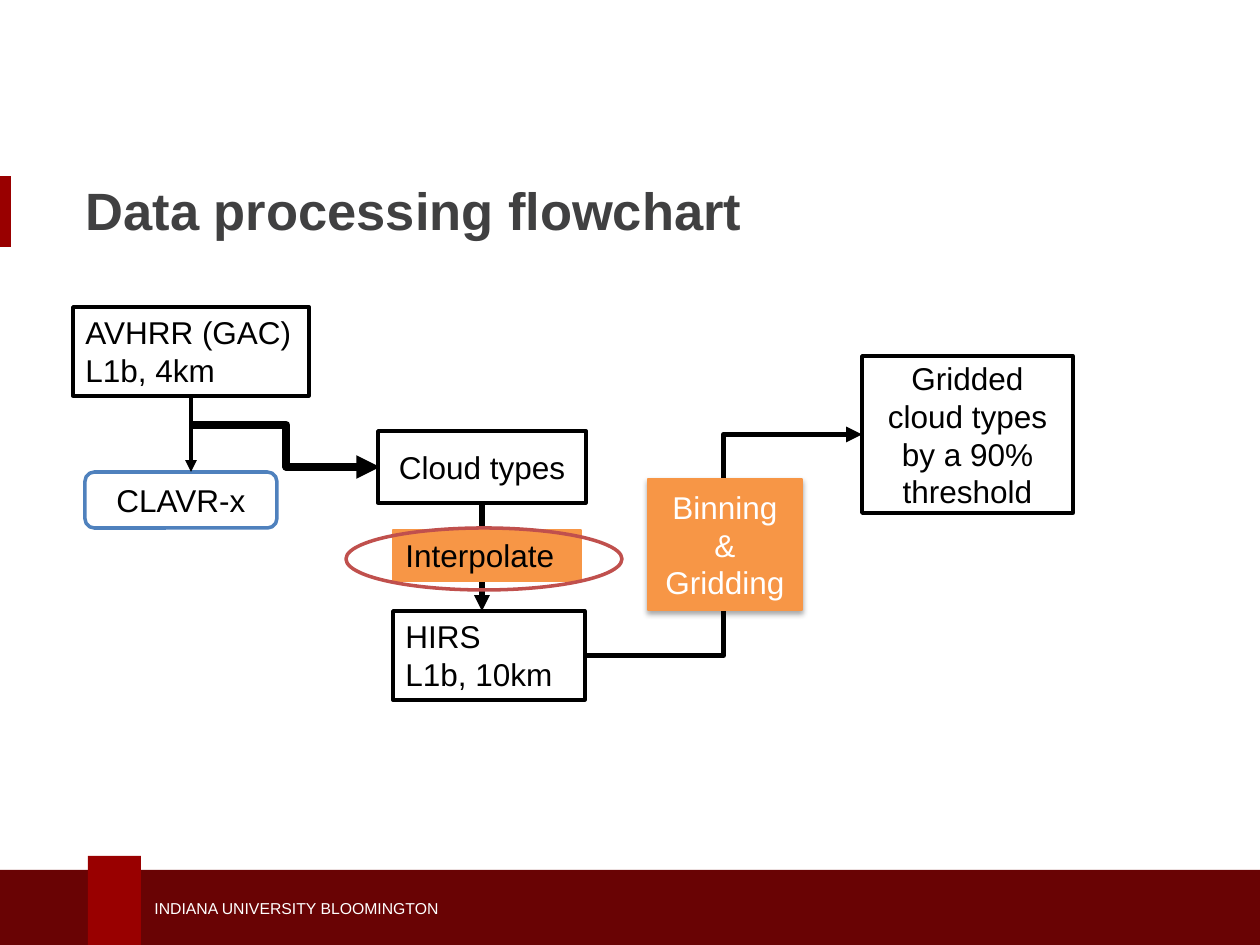
from lxml import etree
from pptx import Presentation
from pptx.dml.color import RGBColor
from pptx.enum.shapes import MSO_CONNECTOR, MSO_SHAPE
from pptx.enum.text import MSO_ANCHOR, PP_ALIGN
from pptx.oxml import parse_xml
from pptx.oxml.ns import nsdecls, qn
from pptx.util import Pt

RECT, ROUND, OVAL = MSO_SHAPE.RECTANGLE, MSO_SHAPE.ROUNDED_RECTANGLE, MSO_SHAPE.OVAL
STRAIGHT, ELBOW = MSO_CONNECTOR.STRAIGHT, MSO_CONNECTOR.ELBOW
TOP, MIDDLE = MSO_ANCHOR.TOP, MSO_ANCHOR.MIDDLE
LEFT, CENTER = PP_ALIGN.LEFT, PP_ALIGN.CENTER
BOTTOM_SITE, LEFT_SITE, RIGHT_SITE = 2, 1, 3
PX = 914400 / 126
rgb = RGBColor.from_string

prs = Presentation()
prs.slide_width, prs.slide_height = round(1260 * PX), round(945 * PX)
slide = prs.slides.add_slide(prs.slide_layouts[5])
shapes = slide.shapes


def add_text(sp, text, size=18, color="000000", bold=False, align=LEFT, anchor=TOP):
    tf = sp.text_frame
    tf.word_wrap = True
    tf.vertical_anchor = anchor
    for i, line in enumerate(text.split("\n")):
        p = tf.paragraphs[0] if i == 0 else tf.add_paragraph()
        p.alignment = align
        r = p.add_run()
        r.text = line
        r.font.name = "Arial"
        r.font.size = Pt(size)
        r.font.bold = bold
        r.font.color.rgb = rgb(color)


def add_box(kind, at, fill=None, line=None, width=2):
    sp = shapes.add_shape(kind, *[round(v * PX) for v in at])
    sp.shadow.inherit = False
    if fill:
        sp.fill.solid()
        sp.fill.fore_color.rgb = rgb(fill)
    else:
        sp.fill.background()
    if line:
        sp.line.color.rgb = rgb(line)
        sp.line.width = Pt(width)
    else:
        sp.line.fill.background()
    return sp


for at, fill in [
    ((0, 176, 11, 71), "990000"),
    ((0, 870, 1260, 75), "690304"),
    ((88, 856, 53, 89), "990000"),
]:
    add_box(RECT, at, fill)

footer = shapes.add_textbox(*[round(v * PX) for v in (142, 892, 498, 32)])
add_text(footer, "INDIANA UNIVERSITY BLOOMINGTON", size=9, color="FFFFFF", anchor=MIDDLE)

title = shapes.title
title.left, title.top, title.width, title.height = [round(v * PX) for v in (73, 145, 1102, 129)]
add_text(title, "Data processing flowchart", size=30, color="404041", bold=True, anchor=MIDDLE)

steps = {}
for name, kind, at, line, text, align, anchor in [
    ("avhrr", RECT, (73, 307, 236, 89), "000000", "AVHRR (GAC)\nL1b, 4km", LEFT, TOP),
    ("hirs", RECT, (393, 611, 192, 89), "000000", "HIRS\nL1b, 10km", LEFT, TOP),
    ("clavr", ROUND, (85, 472, 192, 56), "4F81BD", "CLAVR-x", CENTER, MIDDLE),
    ("cloud", RECT, (378, 431, 208, 72), "000000", "Cloud types", CENTER, MIDDLE),
    ("gridded", RECT, (862, 356, 211, 157), "000000",
     "Gridded cloud types by a 90% threshold", CENTER, MIDDLE),
]:
    steps[name] = add_box(kind, at, "FFFFFF", line)
    add_text(steps[name], text, align=align, anchor=anchor)

for kind, ends, width, begin, end in [
    (ELBOW, (193, 425, 380, 467), 4.5, None, None),
    (STRAIGHT, (191, 396, 191, 472), 2.25, ("avhrr", BOTTOM_SITE), None),
    (ELBOW, (585, 655, 862, 434), 3, ("hirs", RIGHT_SITE), ("gridded", LEFT_SITE)),
    (STRAIGHT, (482, 503, 482, 611), 3, ("cloud", BOTTOM_SITE), None),
]:
    c = shapes.add_connector(kind, *[round(v * PX) for v in ends])
    if begin:
        c.begin_connect(steps[begin[0]], begin[1])
    if end:
        c.end_connect(steps[end[0]], end[1])
    c.line.color.rgb = rgb("000000")
    c.line.width = Pt(width)
    etree.SubElement(c.line._get_or_add_ln(), qn("a:tailEnd"), type="triangle")
    etree.SubElement(c._element.spPr, qn("a:effectLst"))

interpolate = add_box(RECT, (393, 530, 188, 51), "F79646", "F79646", 0.75)
add_text(interpolate, "Interpolate")

binning = add_box(RECT, (648, 479, 154, 131), "F79646", "F79646", 0.75)
add_text(binning, "Binning\n&\nGridding", color="FFFFFF", align=CENTER, anchor=MIDDLE)
binning._element.spPr.find(qn("a:effectLst")).append(parse_xml(
    f'<a:outerShdw {nsdecls("a")} blurRad="40000" dist="23000" dir="5400000" rotWithShape="0">'
    '<a:srgbClr val="000000"><a:alpha val="35000"/></a:srgbClr></a:outerShdw>'))

add_box(OVAL, (346, 528, 276, 62), line="C0504D")

prs.save("out.pptx")
